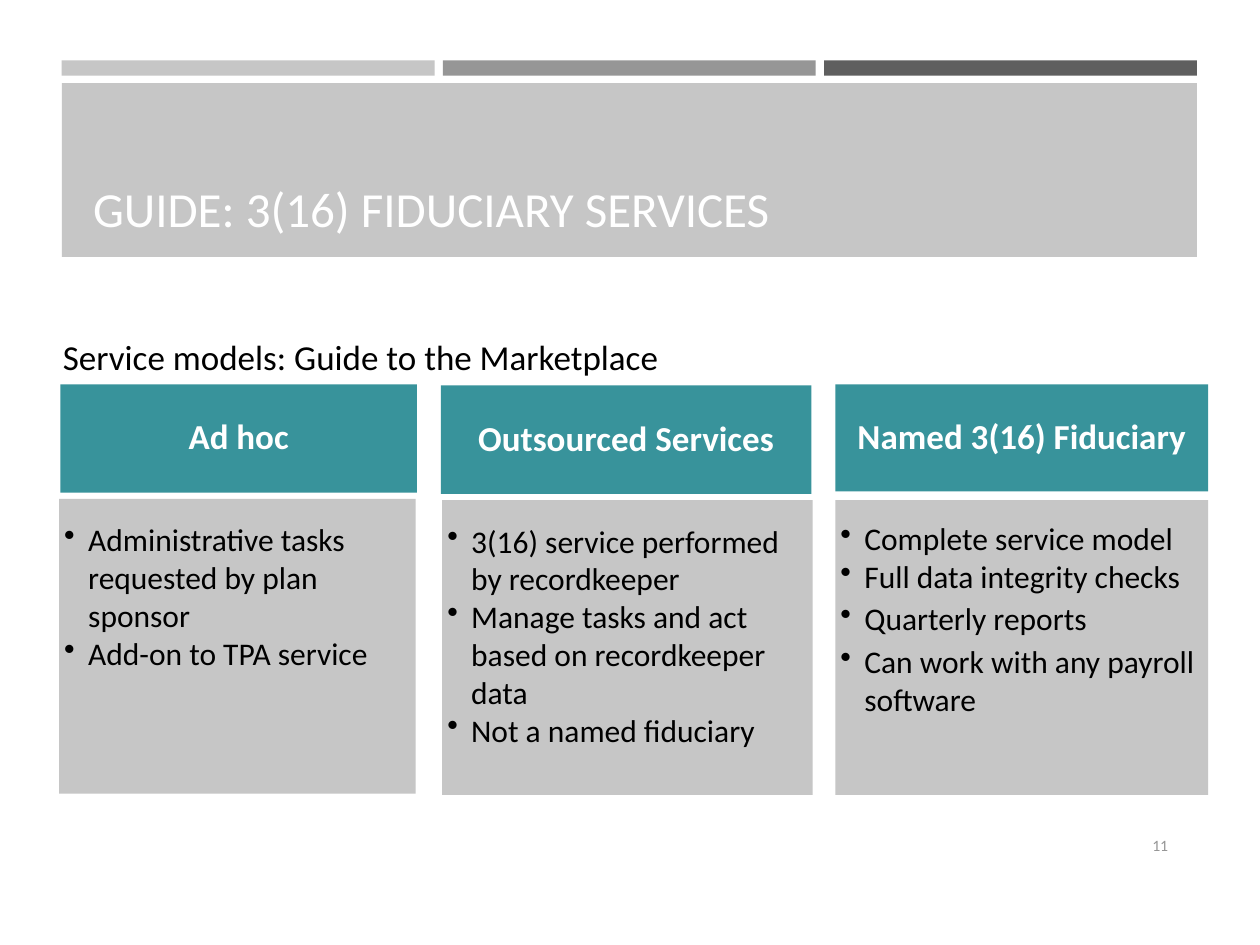
import pptx
import pptx.dml.color
import pptx.enum.shapes
import pptx.enum.text
import pptx.oxml
import pptx.oxml.ns
import pptx.util

Inches = pptx.util.Inches
Pt = pptx.util.Pt
RGBColor = pptx.dml.color.RGBColor
Align = pptx.enum.text.PP_ALIGN
Anchor = pptx.enum.text.MSO_ANCHOR

WHITE = RGBColor(0xFF, 0xFF, 0xFF)
BLACK = RGBColor(0x00, 0x00, 0x00)
LIGHT_GRAY = RGBColor(0xC6, 0xC6, 0xC6)
MEDIUM_GRAY = RGBColor(0x96, 0x96, 0x96)
DARK_GRAY = RGBColor(0x5F, 0x5F, 0x5F)
TEAL = RGBColor(0x38, 0x93, 0x9B)

SERVICE_MODELS = [
    ("Ad hoc", (0.48, 3.05, 2.83, 0.86), (0.47, 3.96, 2.83, 2.34), 0.17, 0, [
        "Administrative tasks requested by plan sponsor",
        "Add-on to TPA service",
    ]),
    ("Outsourced Services", (3.5, 3.06, 2.94, 0.86), (3.51, 3.97, 2.94, 2.34), 0.17, 0, [
        "3(16) service performed by recordkeeper",
        "Manage tasks and act based on recordkeeper data",
        "Not a named fiduciary",
    ]),
    ("Named 3(16) Fiduciary", (6.63, 3.05, 2.96, 0.85), (6.63, 3.97, 2.96, 2.34), 0.15, 2.7, [
        "Complete service model",
        "Full data integrity checks",
        "Quarterly reports",
        "Can work with any payroll software",
    ]),
]


def add_rectangle(slide, box, color):
    """Add a plain filled rectangle."""
    shape = slide.shapes.add_shape(
        pptx.enum.shapes.MSO_SHAPE.RECTANGLE, *map(Inches, box))
    shape.shadow.inherit = False
    shape.fill.solid()
    shape.fill.fore_color.rgb = color
    shape.line.fill.background()
    return shape


def set_frame(shape, anchor, insets=(0.1, 0.05, 0.1, 0.05)):
    """Set wrapping, anchor and insets, and return the text frame."""
    frame = shape.text_frame
    frame.word_wrap = True
    frame.vertical_anchor = anchor
    (frame.margin_left, frame.margin_top,
     frame.margin_right, frame.margin_bottom) = map(Inches, insets)
    return frame


def write(paragraph, text, size, color, align=Align.LEFT, bold=False):
    """Add one formatted run to a paragraph."""
    paragraph.alignment = align
    run = paragraph.add_run()
    run.text = text
    run.font.name = "Calibri"
    run.font.size = Pt(size)
    run.font.bold = bold
    run.font.color.rgb = color


def add_label(slide, box, text, size, color, anchor=Anchor.TOP, align=Align.LEFT):
    """Add a text box with a single line."""
    shape = slide.shapes.add_textbox(*map(Inches, box))
    write(set_frame(shape, anchor).paragraphs[0], text, size, color, align)


def add_bullet(paragraph):
    """Give a paragraph a hanging round bullet."""
    properties = paragraph._p.get_or_add_pPr()
    properties.set("marL", str(Inches(0.19)))
    properties.set("indent", str(-Inches(0.19)))
    bullet = pptx.oxml.parse_xml(
        f'<a:buChar {pptx.oxml.ns.nsdecls("a")} char="•"/>')
    properties.append(bullet)


def add_header(slide, box, text):
    """Add the teal header of a service model."""
    shape = add_rectangle(slide, box, TEAL)
    paragraph = set_frame(shape, Anchor.MIDDLE, (0.16, 0.09, 0.16, 0.09)).paragraphs[0]
    paragraph.line_spacing = 0.9
    write(paragraph, text, 20, WHITE, Align.CENTER, True)


def add_bullet_panel(slide, box, top_inset, gap, items):
    """Add the gray panel with the features of a service model."""
    shape = add_rectangle(slide, box, LIGHT_GRAY)
    frame = set_frame(shape, Anchor.TOP, (0.04, top_inset, 0.05, 0.06))
    for index, item in enumerate(items):
        paragraph = frame.add_paragraph() if index else frame.paragraphs[0]
        paragraph.space_after = Pt(gap if index else 0)
        add_bullet(paragraph)
        write(paragraph, item, 18, BLACK)


def main():
    """Build and save the slide."""
    presentation = pptx.Presentation()
    presentation.slide_width = Inches(10)
    presentation.slide_height = Inches(7.5)
    slide = presentation.slides.add_slide(presentation.slide_layouts[6])

    for index, color in enumerate((LIGHT_GRAY, MEDIUM_GRAY, DARK_GRAY)):
        add_rectangle(slide, (0.49 + 3.025 * index, 0.48, 2.96, 0.12), color)
    add_rectangle(slide, (0.49, 0.66, 9.01, 1.38), LIGHT_GRAY)
    add_label(slide, (0.64, 0.75, 8.74, 1.18), "GUIDE: 3(16) FIDUCIARY SERVICES",
              28, WHITE, Anchor.BOTTOM)
    add_label(slide, (8.53, 6.51, 0.84, 0.4), "11", 9, MEDIUM_GRAY,
              Anchor.MIDDLE, Align.RIGHT)

    for name, header_box, panel_box, top_inset, gap, items in SERVICE_MODELS:
        add_header(slide, header_box, name)
        add_bullet_panel(slide, panel_box, top_inset, gap, items)
    add_label(slide, (0.4, 2.61, 6.15, 0.44),
              "Service models: Guide to the Marketplace", 20, BLACK)

    presentation.save("out.pptx")


if __name__ == "__main__":
    main()
